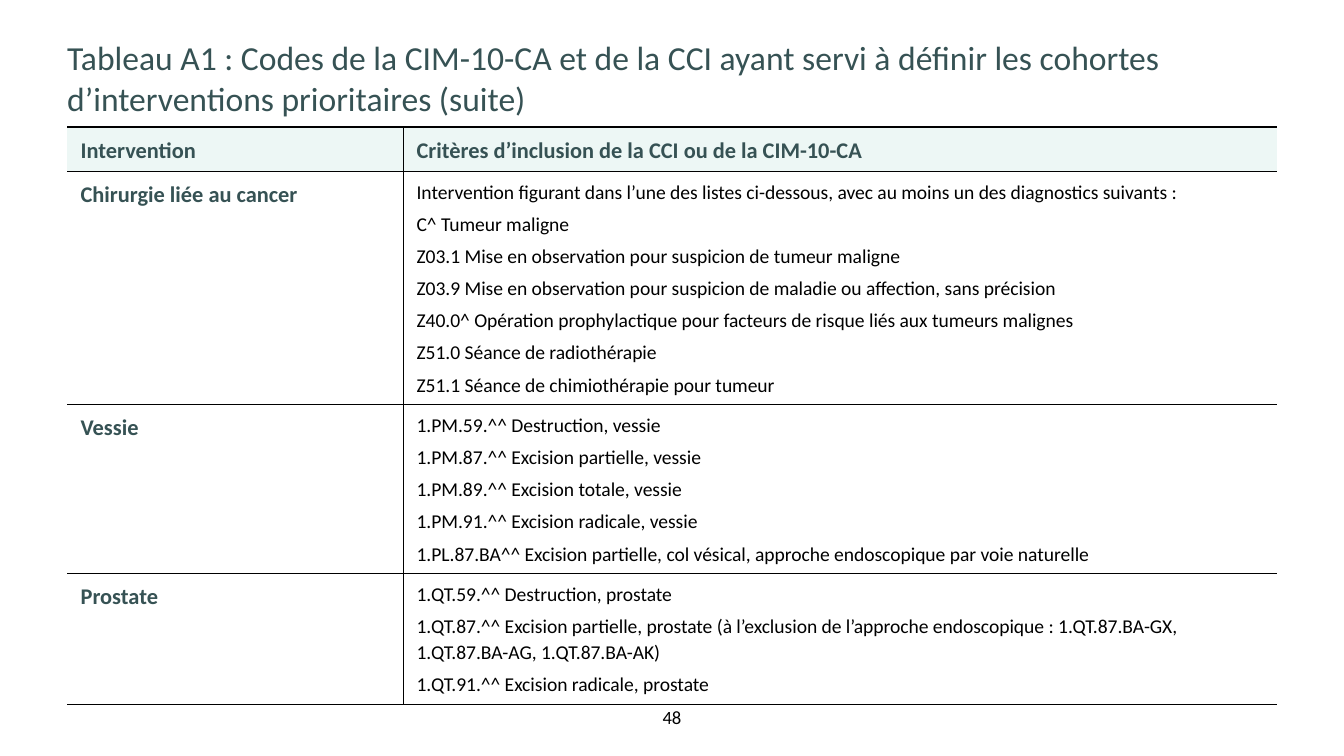
from lxml.etree import SubElement
from pptx import Presentation
from pptx.dml.color import RGBColor
from pptx.enum.text import MSO_ANCHOR as ANCHOR, PP_ALIGN as ALIGN
from pptx.oxml.ns import qn
from pptx.util import Pt

TEAL = RGBColor(0x36, 0x52, 0x54)
MINT = RGBColor(0xED, 0xF7, 0xF5)
BLACK = RGBColor(0, 0, 0)
WHITE = RGBColor(0xFF, 0xFF, 0xFF)

TITLE_FONT = {"name": "Calibri", "size": Pt(18), "bold": False}
HEAD_FONT = {"name": "Calibri", "size": Pt(12), "bold": True}
BODY_FONT = {"name": "Calibri", "size": Pt(10.5), "bold": False}
NUMBER_FONT = {"name": "Calibri", "size": Pt(10), "bold": False}

TITLE = ("Tableau A1 : Codes de la CIM-10-CA et de la CCI ayant servi à définir "
         "les cohortes d’interventions prioritaires (suite)")
HEADER = ("Intervention", "Critères d’inclusion de la CCI ou de la CIM-10-CA")
# Intervention, row height, inclusion criteria
INTERVENTIONS = [
    ("Chirurgie liée au cancer", 125, [
        "Intervention figurant dans l’une des listes ci-dessous, "
        "avec au moins un des diagnostics suivants :",
        "C^ Tumeur maligne",
        "Z03.1 Mise en observation pour suspicion de tumeur maligne",
        "Z03.9 Mise en observation pour suspicion de maladie ou affection, sans précision",
        "Z40.0^ Opération prophylactique pour facteurs de risque liés aux tumeurs malignes",
        "Z51.0 Séance de radiothérapie",
        "Z51.1 Séance de chimiothérapie pour tumeur",
    ]),
    ("Vessie", 90, [
        "1.PM.59.^^ Destruction, vessie",
        "1.PM.87.^^ Excision partielle, vessie",
        "1.PM.89.^^ Excision totale, vessie",
        "1.PM.91.^^ Excision radicale, vessie",
        "1.PL.87.BA^^ Excision partielle, col vésical, approche endoscopique par voie naturelle",
    ]),
    ("Prostate", 69.5, [
        "1.QT.59.^^ Destruction, prostate",
        "1.QT.87.^^ Excision partielle, prostate (à l’exclusion de l’approche "
        "endoscopique : 1.QT.87.BA-GX, 1.QT.87.BA-AG, 1.QT.87.BA-AK)",
        "1.QT.91.^^ Excision radicale, prostate",
    ]),
]


def place(sp, box):
    sp.left, sp.top, sp.width, sp.height = (Pt(v) for v in box)


def write(tf, lines, font, color, align=ALIGN.LEFT, spacing=None):
    for i, line in enumerate(lines):
        p = tf.paragraphs[0] if i == 0 else tf.add_paragraph()
        p.alignment = align
        p.line_spacing = spacing
        p.space_before = Pt(3 if i else 0)
        r = p.add_run()
        r.text = line
        for key, value in font.items():
            setattr(r.font, key, value)
        r.font.color.rgb = color


def fit_frame(tf, anchor):
    tf.word_wrap = True
    tf.vertical_anchor = anchor
    for side in ("left", "top", "right", "bottom"):
        setattr(tf, f"margin_{side}", 0)


def set_borders(cell, widths):
    """Draw the sides listed in widths (points) and clear the others."""
    tcPr = cell._tc.get_or_add_tcPr()
    for side in "LRTB":
        ln = SubElement(tcPr, qn(f"a:ln{side}"))
        if side in widths:
            ln.set("w", str(Pt(widths[side])))
            fill = SubElement(ln, qn("a:solidFill"))
            SubElement(fill, qn("a:srgbClr")).set("val", str(BLACK))
        else:
            ln.set("w", "0")
            SubElement(ln, qn("a:noFill"))


def add_title(s, box):
    title = s.shapes.title
    place(title, box)
    fit_frame(title.text_frame, ANCHOR.TOP)
    write(title.text_frame, [TITLE], TITLE_FONT, TEAL)


def add_criteria_table(s, box):
    rows = [(HEADER[0], 23.5, [HEADER[1]])] + INTERVENTIONS
    table = s.shapes.add_table(len(rows), 2, *(Pt(v) for v in box)).table
    table.horz_banding = False
    for column, width in zip(table.columns, (180, box[2] - 180)):
        column.width = Pt(width)

    for i, (name, height, criteria) in enumerate(rows):
        table.rows[i].height = Pt(height)
        header = i == 0
        for j, lines in enumerate(([name], criteria)):
            cell = table.cell(i, j)
            # Thick rule on top, thin rules between rows and columns
            set_borders(cell, {"T": 1 if header else 0.5, "B": 0.5, "RL"[j]: 0.5})
            cell.fill.solid()
            cell.fill.fore_color.rgb = MINT if header else WHITE
            cell.vertical_anchor = ANCHOR.MIDDLE if header else ANCHOR.TOP
            strong = header or j == 0
            write(cell.text_frame, lines, HEAD_FONT if strong else BODY_FONT,
                  TEAL if strong else BLACK, spacing=1.12)


def add_page_number(s, box):
    tf = s.shapes.add_textbox(*(Pt(v) for v in box)).text_frame
    fit_frame(tf, ANCHOR.MIDDLE)
    write(tf, ["48"], NUMBER_FONT, BLACK, ALIGN.CENTER)


def main():
    prs = Presentation()
    prs.slide_width, prs.slide_height = Pt(720), Pt(405)
    s = prs.slides.add_slide(prs.slide_layouts[5])
    add_title(s, (36, 20, 648, 44))
    add_criteria_table(s, (36, 68, 648, 308))
    add_page_number(s, (337.5, 378, 45, 12.2))
    prs.save("out.pptx")


if __name__ == "__main__":
    main()
